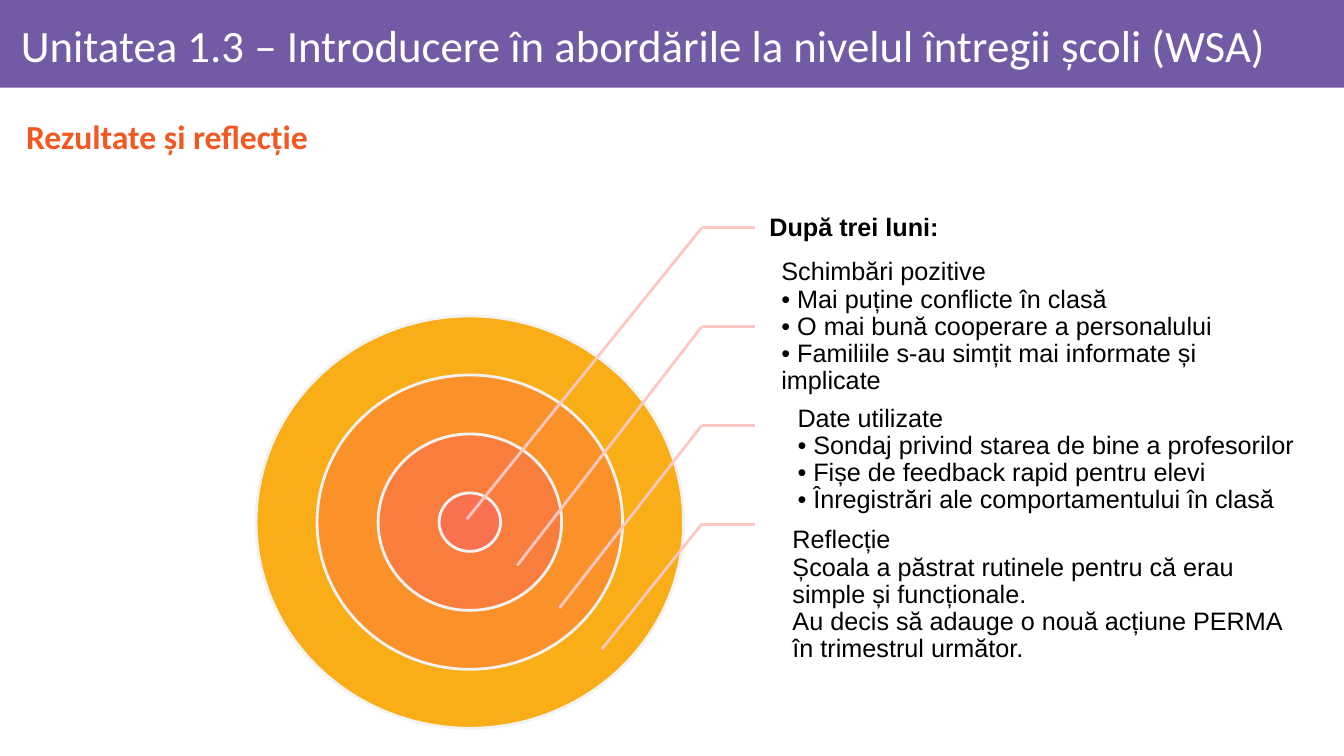
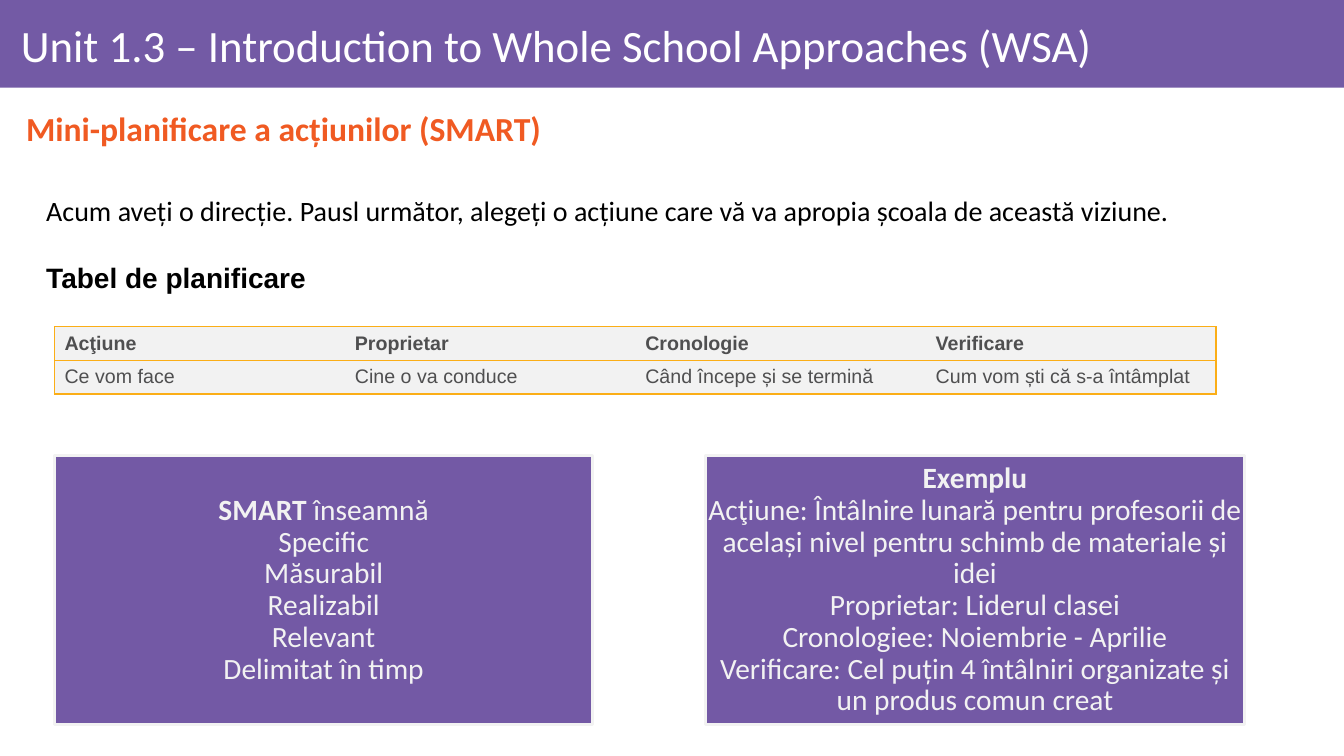
from lxml import etree
from pptx import Presentation
from pptx.dml.color import RGBColor
from pptx.enum import shapes, text
from pptx.oxml import ns
from pptx.util import Inches, Pt

WHITE = RGBColor(0xFF, 0xFF, 0xFF)
BLACK = RGBColor(0x00, 0x00, 0x00)
BAND = RGBColor(0x73, 0x5A, 0xA5)
PANEL = RGBColor(0x73, 0x59, 0xA5)
HEADING = RGBColor(0xF0, 0x5A, 0x22)
PALE = RGBColor(0xF2, 0xF2, 0xF2)
LEADER = RGBColor(0xFD, 0xC8, 0xC1)
TABLE_TEXT = RGBColor(0x4F, 0x4F, 0x50)
TABLE_BORDER = RGBColor(0xFB, 0xAE, 0x17)
RINGS = [
    RGBColor(0xF9, 0xAD, 0x16),
    RGBColor(0xFA, 0x92, 0x29),
    RGBColor(0xF9, 0x7E, 0x3D),
    RGBColor(0xFA, 0x71, 0x50),
]


# Text
def style_span(span, font, size, color, bold=False):
    span.font.name = font
    span.font.size = Pt(size)
    span.font.color.rgb = color
    span.font.bold = bold


def write_lines(frame, lines, font, size, color, bold=False,
                align=text.PP_ALIGN.LEFT, spacing=0.9):
    frame.text = "\n".join(lines)
    for para in frame.paragraphs:
        para.alignment = align
        para.line_spacing = spacing
        for span in para.runs:
            style_span(span, font, size, color, bold)


def set_frame(frame, insets, anchor=text.MSO_ANCHOR.MIDDLE):
    frame.word_wrap = True
    frame.vertical_anchor = anchor
    (frame.margin_left, frame.margin_top,
     frame.margin_right, frame.margin_bottom) = map(Inches, insets)


def add_text(page, place, insets, lines, *style, anchor=text.MSO_ANCHOR.MIDDLE, **options):
    box = page.shapes.add_textbox(*map(Inches, place))
    set_frame(box.text_frame, insets, anchor)
    write_lines(box.text_frame, lines, *style, **options)
    return box


# Shapes and lines
def add_filled(page, kind, place, fill, outline=None):
    shape = page.shapes.add_shape(kind, *map(Inches, place))
    shape.shadow.inherit = False
    shape.fill.solid()
    shape.fill.fore_color.rgb = fill
    if outline is None:
        shape.line.fill.background()
    else:
        shape.line.color.rgb = outline
        shape.line.width = Pt(2)
    return shape


def add_leader(page, start, end):
    line = page.shapes.add_connector(
        shapes.MSO_CONNECTOR.STRAIGHT, *map(Inches, (*start, *end)))
    line.line.color.rgb = LEADER
    line.line.width = Pt(2)
    etree.SubElement(line.element.spPr, ns.qn("a:effectLst"))


# Title band and heading shared by the slides
def add_page(deck, title, heading, heading_top):
    page = deck.slides.add_slide(deck.slide_layouts[6])
    add_filled(page, shapes.MSO_SHAPE.RECTANGLE, (0, 0, 13.33, 0.87), BAND)
    add_text(page, (0.11, 0.09, 13.06, 0.78), (0.1, 0.06, 0.06, 0.06),
             [title], "Calibri", 32, WHITE)
    add_text(page, (0.16, heading_top, 12.81, 0.6), (0.1, 0.05, 0.1, 0.05),
             [heading], "Calibri", 24, HEADING, bold=True)
    return page


# Concentric rings, largest first
def add_rings(page, center_x, center_y):
    for index, color in enumerate(RINGS):
        width, height = 4.24 - 1.21 * index, 4.09 - 1.17 * index
        place = (center_x - width / 2, center_y - height / 2, width, height)
        add_filled(page, shapes.MSO_SHAPE.OVAL, place, color, PALE)


# Leaders run from the labels down to the rings
def add_leaders(page, targets):
    for index, target in enumerate(targets):
        bend = (6.96, 2.26 + 0.98 * index)
        add_leader(page, bend, (7.49, bend[1]))
        add_leader(page, bend, target)


# Table cells
def set_borders(cell, visible):
    properties = cell._tc.get_or_add_tcPr()
    for side in "LRTB":
        line = etree.SubElement(properties, ns.qn("a:ln" + side), w=str(Pt(1)))
        if side in visible:
            fill = etree.SubElement(line, ns.qn("a:solidFill"))
            etree.SubElement(fill, ns.qn("a:srgbClr"), val=str(TABLE_BORDER))
        else:
            etree.SubElement(line, ns.qn("a:noFill"))


def add_plan_table(page, rows):
    columns = len(rows[0])
    table = page.shapes.add_table(
        len(rows), columns, Inches(0.54), Inches(3.24),
        Inches(2.88 * columns), Inches(0.33 * len(rows))).table
    table.first_row = False
    table.horz_banding = False
    for row_index, row in enumerate(rows):
        for column, label in enumerate(row):
            cell = table.cell(row_index, column)
            edges = {0: "LTB", columns - 1: "RTB"}
            set_borders(cell, edges.get(column, "TB"))
            cell.fill.solid()
            cell.fill.fore_color.rgb = PALE
            cell.vertical_anchor = text.MSO_ANCHOR.MIDDLE
            write_lines(cell.text_frame, [label], "Arial", 14, TABLE_TEXT,
                        bold=row_index == 0, spacing=1.0)


# Purple panel whose first line opens in bold
def add_panel(page, left, lead, rest, lines):
    panel = add_filled(page, shapes.MSO_SHAPE.RECTANGLE,
                       (left, 4.52, 5.34, 2.67), PANEL, PALE)
    frame = panel.text_frame
    set_frame(frame, (0.01, 0.01, 0.01, 0.01))
    style = ("Calibri", 21, PALE)
    write_lines(frame, [lead, *lines], *style, align=text.PP_ALIGN.CENTER)
    opening = frame.paragraphs[0]
    opening.runs[0].font.bold = True
    if rest:
        span = opening.add_run()
        span.text = rest
        style_span(span, *style)


def build_results(deck):
    page = add_page(
        deck, "Unitatea 1.3 – Introducere în abordările la nivelul întregii școli (WSA)",
        "Rezultate și reflecție", 1.08)
    add_rings(page, 4.66, 5.18)
    add_leaders(page, [(4.63, 5.15), (5.13, 5.61), (5.55, 6.03), (5.97, 6.44)])
    labels = [
        ((7.49, 1.77, 2.12, 0.98), True, ["După trei luni:"]),
        ((7.61, 2.77, 4.87, 0.95), False, [
            "Schimbări pozitive",
            "• Mai puține conflicte în clasă",
            "• O mai bună cooperare a personalului",
            "• Familiile s-au simțit mai informate și implicate"]),
        ((7.77, 4.07, 5.2, 0.98), False, [
            "Date utilizate",
            "• Sondaj privind starea de bine a profesorilor",
            "• Fișe de feedback rapid pentru elevi",
            "• Înregistrări ale comportamentului în clasă"]),
        ((7.72, 5.27, 5.04, 1.27), False, [
            "Reflecție",
            "Școala a păstrat rutinele pentru că erau simple și funcționale.",
            "Au decis să adauge o nouă acțiune PERMA în trimestrul următor."]),
    ]
    for place, bold, lines in labels:
        add_text(page, place, (0.14, 0.02, 0.02, 0.02), lines,
                 "Arial", 18, BLACK, bold=bold)


def build_planning(deck):
    page = add_page(
        deck, "Unit 1.3 – Introduction to Whole School Approaches (WSA)",
        "Mini-planificare a acțiunilor (SMART)", 1)

    # Introduction and table caption
    intro = add_text(
        page, (0.36, 1.87, 12.81, 1.11), (0.1, 0.05, 0.1, 0.05),
        ["Acum aveți o direcție. Pausl următor, alegeți o acțiune care vă va "
         "apropia școala de această viziune.",
         "Tabel de planificare"],
        "Calibri", 20, BLACK, anchor=text.MSO_ANCHOR.TOP, spacing=1.0)
    caption = intro.text_frame.paragraphs[1]
    caption.space_before = Pt(24)
    style_span(caption.runs[0], "Arial", 20, BLACK, bold=True)

    add_plan_table(page, [
        ["Acţiune", "Proprietar", "Cronologie", "Verificare"],
        ["Ce vom face", "Cine o va conduce", "Când începe și se termină",
         "Cum vom ști că s-a întâmplat"],
    ])
    add_panel(page, 0.54, "SMART", " înseamnă", [
        "Specific", "Măsurabil", "Realizabil", "Relevant", "Delimitat în timp"])
    add_panel(page, 7, "Exemplu", "", [
        "Acţiune: Întâlnire lunară pentru profesorii de același nivel pentru "
        "schimb de materiale și idei",
        "Proprietar: Liderul clasei",
        "Cronologiee: Noiembrie - Aprilie",
        "Verificare: Cel puțin 4 întâlniri organizate și un produs comun creat"])


def main():
    deck = Presentation()
    deck.slide_width = Inches(13.33)
    deck.slide_height = Inches(7.5)
    build_results(deck)
    build_planning(deck)
    deck.save("out.pptx")


if __name__ == "__main__":
    main()
